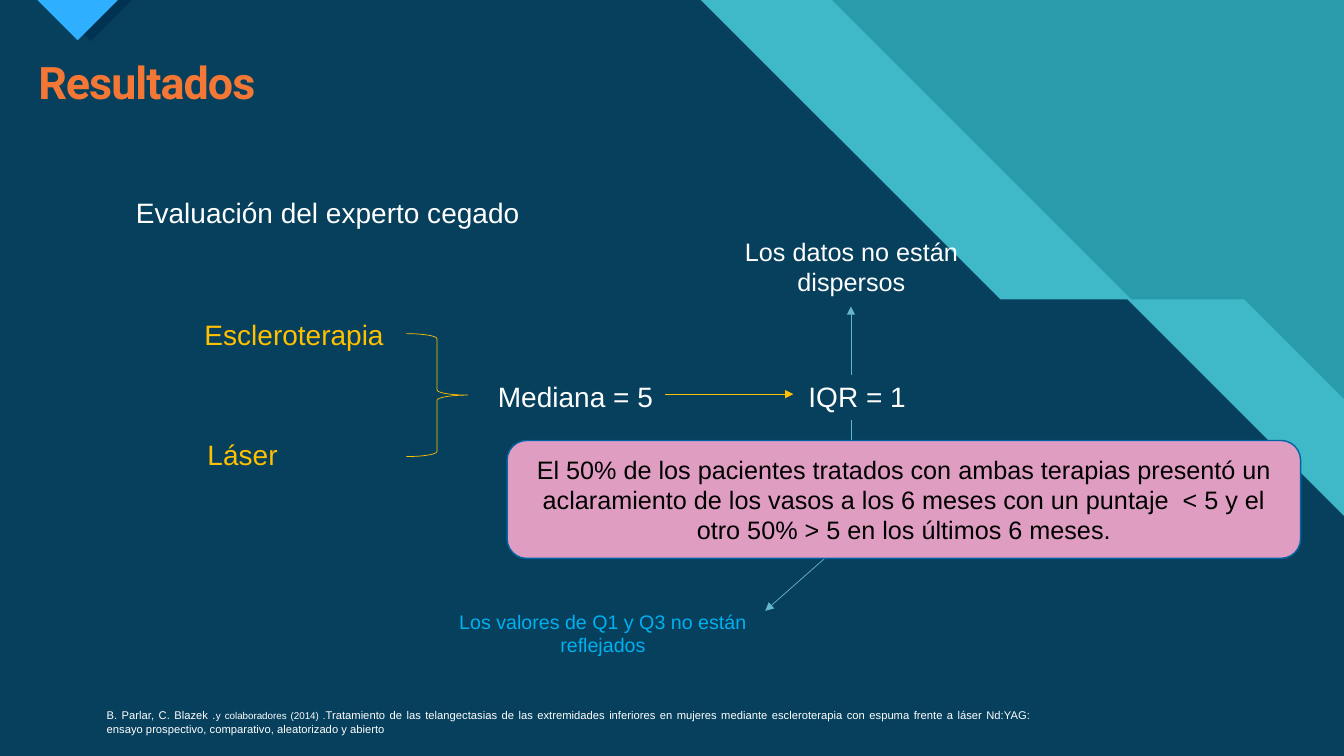
from lxml.etree import SubElement
from pptx import Presentation
from pptx.dml.color import RGBColor
from pptx.enum.shapes import MSO_CONNECTOR, MSO_SHAPE
from pptx.enum.text import MSO_ANCHOR, PP_ALIGN
from pptx.oxml.ns import qn
from pptx.util import Inches, Pt

WIDTH, HEIGHT = 13.33, 7.5
WHITE, YELLOW, TEAL, NAVY = "FFFFFF", "FFC000", "63B7C6", "003352"


def rgb(hex_colour):
    return RGBColor.from_string(hex_colour)


def box(left, top, width, height):
    return [Inches(length) for length in (left, top, width, height)]


def style_font(font, size, colour, name="Arial"):
    font.name = name
    font.size = Pt(size)
    font.color.rgb = rgb(colour)


def add_polygon(slide, points, colour, opacity=100):
    corners = [(Inches(x), Inches(y)) for x, y in points]
    builder = slide.shapes.build_freeform(*corners[0])
    builder.add_line_segments(corners[1:], close=True)
    shape = builder.convert_to_shape()
    shape.shadow.inherit = False
    shape.fill.solid()
    shape.fill.fore_color.rgb = rgb(colour)
    shape.line.fill.background()
    if opacity < 100:
        colour_element = shape.element.spPr.find(qn("a:solidFill"))[0]
        SubElement(colour_element, qn("a:alpha"), val=str(opacity * 1000))


def add_text(slide, left, top, width, height, text, size=20, colour=WHITE,
             alignment=PP_ALIGN.LEFT):
    text_box = slide.shapes.add_textbox(*box(left, top, width, height))
    text_box.text_frame.word_wrap = True
    paragraph = text_box.text_frame.paragraphs[0]
    paragraph.text = text
    paragraph.alignment = alignment
    style_font(paragraph.font, size, colour)
    return paragraph


def add_arrow(slide, start, end, colour=TEAL):
    points = [Inches(length) for length in (*start, *end)]
    arrow = slide.shapes.add_connector(MSO_CONNECTOR.STRAIGHT, *points)
    arrow.line.color.rgb = rgb(colour)
    arrow.line.width = Pt(0.5)
    SubElement(arrow.line._get_or_add_ln(), qn("a:tailEnd"), type="triangle")
    SubElement(arrow.element.spPr, qn("a:effectLst"))


def add_backdrop(slide, width, height):
    """Two diagonal bands over teal, with a small pointer at the top left."""
    slide.background.fill.solid()
    slide.background.fill.fore_color.rgb = rgb("299CAB")
    bottom = [(width, height), (0, height)]
    add_polygon(slide, [(0, 0), (8.25, 0), (11.22, 2.97), (12.34, 2.97),
                        (width, 3.96), *bottom], "47C3D3", 74)
    add_polygon(slide, [(0, 0), (6.95, 0), (9.92, 2.97), (11.18, 2.97),
                        (width, 5.12), *bottom], NAVY, 90)
    add_polygon(slide, [(0.48, 0), (1.31, 0), (0.9, 0.41)], NAVY)
    add_polygon(slide, [(0.37, 0), (1.17, 0), (0.77, 0.4)], "2FAFFF")


def add_title(slide, left, top, width, height):
    title = slide.shapes.title
    title.left, title.top, title.width, title.height = box(left, top, width, height)
    title.element.getparent().append(title.element)  # in front of the backdrop
    title.text_frame.vertical_anchor = MSO_ANCHOR.MIDDLE
    paragraph = title.text_frame.paragraphs[0]
    paragraph.alignment = PP_ALIGN.LEFT
    paragraph.line_spacing = 0.9
    run = paragraph.add_run()
    run.text = "Resultados"
    style_font(run.font, 32, "F47735", "Roboto")
    run.font.bold = True
    run.font._element.set("spc", "-70")


def add_therapies(slide, left, top):
    """Both therapies, joined by a brace."""
    add_text(slide, left, top, 4.67, 0.44, "Escleroterapia", colour=YELLOW)
    add_text(slide, left + 0.03, top + 1.19, 4.67, 0.44, "Láser", colour=YELLOW)
    brace = slide.shapes.add_shape(MSO_SHAPE.RIGHT_BRACE,
                                   *box(left + 2.1, top + 0.21, 0.61, 1.22))
    brace.shadow.inherit = False
    brace.fill.background()
    brace.line.color.rgb = rgb(YELLOW)
    brace.line.width = Pt(0.5)


def add_statistics(slide, left, top):
    """Median and IQR, with arrows to the remarks above and below."""
    middle = left + 3.6
    add_text(slide, left, top, 1.77, 0.44, "Mediana = 5")
    add_arrow(slide, (left + 1.76, top + 0.19), (left + 3.03, top + 0.19), YELLOW)
    add_text(slide, left + 3.08, top, 1.77, 0.44, "IQR = 1")
    add_arrow(slide, (middle, top + 0.45), (middle, top + 1.17))
    add_arrow(slide, (middle - 0.17, top + 1.74), (middle - 0.85, top + 2.34))
    add_text(slide, left - 0.47, top + 2.28, 3.22, 0.57,
             "Los valores de Q1 y Q3 no están reflejados", 14, "00B0F0",
             PP_ALIGN.CENTER)
    add_arrow(slide, (middle, top), (middle, top - 0.68))
    add_text(slide, left + 2.27, top - 1.43, 2.67, 0.71,
             "Los datos no están dispersos", 18, alignment=PP_ALIGN.CENTER)


def add_conclusion(slide, left, top, width, height):
    card = slide.shapes.add_shape(MSO_SHAPE.ROUNDED_RECTANGLE,
                                  *box(left, top, width, height))
    card.shadow.inherit = False
    card.fill.solid()
    card.fill.fore_color.rgb = rgb("E09DC2")
    card.line.color.rgb = rgb("0065A4")
    card.line.width = Pt(1)
    card.text_frame.word_wrap = True
    card.text_frame.vertical_anchor = MSO_ANCHOR.MIDDLE
    paragraph = card.text_frame.paragraphs[0]
    paragraph.text = (
        "El 50% de los pacientes tratados con ambas terapias presentó un "
        "aclaramiento de los vasos a los 6 meses con un puntaje  < 5 y el "
        "otro 50% > 5 en los últimos 6 meses.")
    paragraph.alignment = PP_ALIGN.CENTER
    style_font(paragraph.font, 18, "000000")


def add_citation(slide, left, top, width, height):
    paragraph = add_text(slide, left, top, width, height, "B. Parlar, C. Blazek .",
                         8, alignment=PP_ALIGN.JUSTIFY)
    collaborators = paragraph.add_run()
    collaborators.text = "y colaboradores (2014) ."
    collaborators.font.size = Pt(7)
    paragraph.add_run().text = (
        "Tratamiento de las telangectasias de las extremidades inferiores en "
        "mujeres mediante escleroterapia con espuma frente a láser Nd:YAG: "
        "ensayo prospectivo, comparativo, aleatorizado y abierto")


def main():
    presentation = Presentation()
    presentation.slide_width = Inches(WIDTH)
    presentation.slide_height = Inches(HEIGHT)
    slide = presentation.slides.add_slide(presentation.slide_layouts[5])
    add_backdrop(slide, WIDTH, HEIGHT)
    add_title(slide, 0.28, 0.55, 12.26, 0.59)
    add_citation(slide, 0.96, 6.98, 9.37, 0.37)
    add_text(slide, 1.25, 1.89, 4.67, 0.44, "Evaluación del experto cegado")
    add_therapies(slide, 1.93, 3.1)
    add_statistics(slide, 4.84, 3.72)
    add_conclusion(slide, 5.03, 4.37, 7.87, 1.17)
    presentation.save("out.pptx")


if __name__ == "__main__":
    main()
